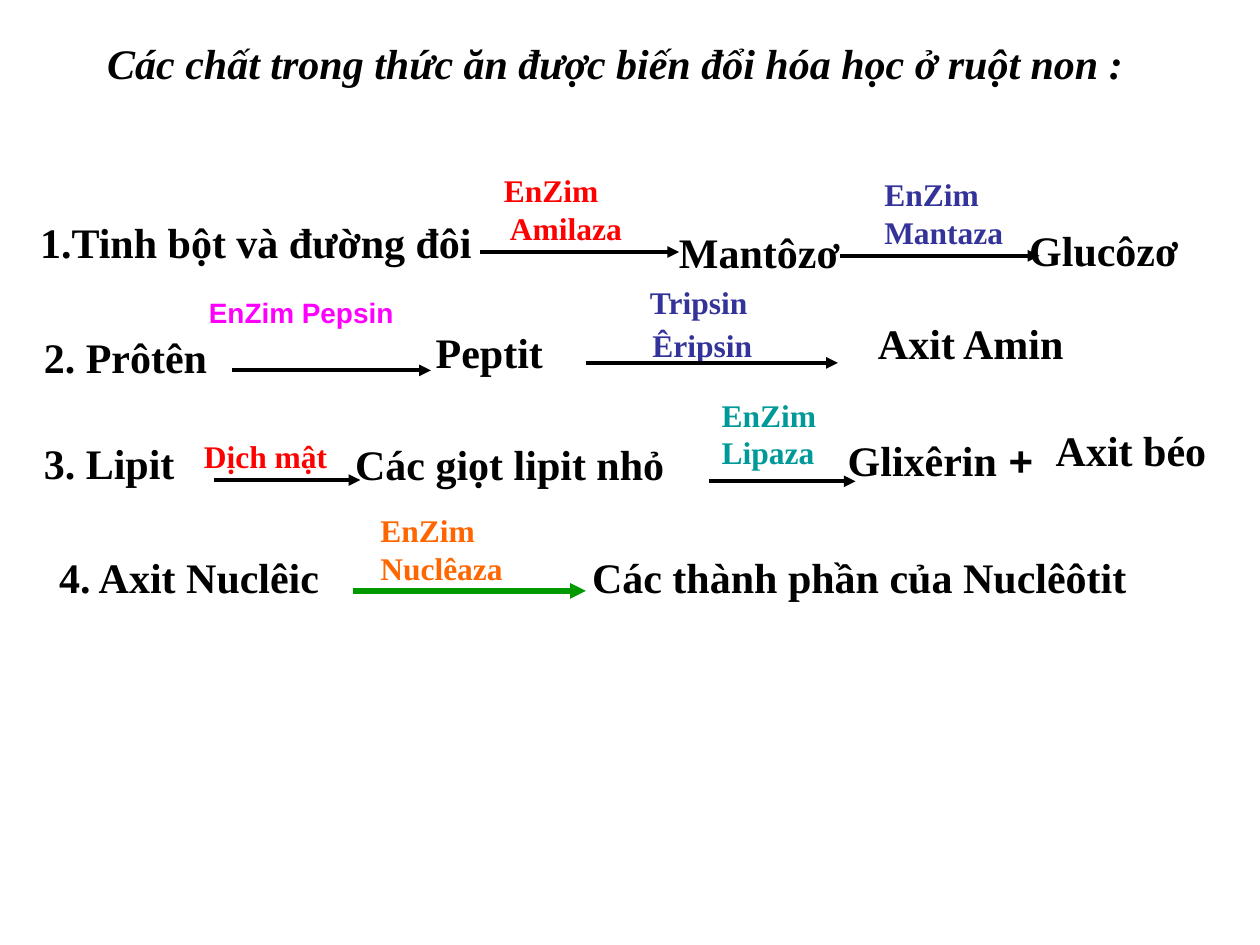
"""Build a slide on how the small intestine chemically breaks down food."""
from lxml.etree import SubElement
from pptx import Presentation
from pptx.dml.color import RGBColor
from pptx.enum.shapes import MSO_CONNECTOR as CONNECTOR
from pptx.enum.text import MSO_AUTO_SIZE as AUTO_SIZE
from pptx.oxml.ns import qn
from pptx.util import Inches, Pt

COLORS = {
    "black": "000000",
    "red": "FF0000",
    "indigo": "333399",
    "magenta": "FF00FF",
    "teal": "009999",
    "orange": "FF6600",
    "green": "009900",
}
SERIF = "Times New Roman"
SANS = "Arial"

SUBSTANCES = [
    ("1.Tinh bột và đường đôi", 0.22, 1.67, 3.7, True),
    ("Mantôzơ", 5.29, 1.75, 1.75, True),
    ("Glucôzơ", 8.07, 1.73, 1.75, True),
    ("2. Prôtên", 0.25, 2.58, 1.5, True),
    ("Peptit", 3.36, 2.54, 1.06, False),
    ("Axit Amin", 6.87, 2.47, 1.76, False),
    ("3. Lipit", 0.25, 3.42, 1.31, True),
    ("Các giọt lipit nhỏ", 2.72, 3.43, 2.68, False),
    ("Axit béo", 8.28, 3.32, 1.41, False),
    ("4. Axit Nuclêic", 0.37, 4.33, 2.29, False),
    ("Các thành phần của Nuclêôtit", 4.6, 4.33, 4.49, False),
]
ENZYMES = [
    ("EnZim\n Amilaza", 3.9, 1.31, 1.15, "red"),
    ("EnZim\nMantaza", 6.92, 1.34, 1.16, "indigo"),
    ("Tripsin", 5.06, 2.2, 0.98, "indigo"),
    ("Êripsin", 5.08, 2.54, 1.17, "indigo"),
    ("Dịch mật", 1.52, 3.42, 1.19, "red"),
    ("EnZim\nLipaza", 5.63, 3.09, 0.96, "teal"),
    ("EnZim\nNuclêaza", 2.92, 4.01, 1.18, "orange"),
]
ARROWS = [
    (3.81, 2, 1.58),
    (6.67, 2.03, 1.58),
    (1.84, 2.94, 1.58),
    (4.65, 2.88, 2),
    (1.7, 3.81, 1.16),
    (5.63, 3.82, 1.16),
]


def format_run(r, size, color, font=SERIF, italic=False):
    """Apply bold lettering to a run."""
    r.font.name = font
    r.font.size = Pt(size)
    r.font.bold = True
    r.font.italic = italic
    r.font.color.rgb = RGBColor.from_string(COLORS[color])


def add_label(slide, text, left, top, width, size=24, color="black",
              wrap=False, font=SERIF, italic=False):
    """Add a text box with one paragraph per line and return its frame."""
    height = 0.1 + len(text.split("\n")) * size / 60
    sp = slide.shapes.add_textbox(Inches(left), Inches(top), Inches(width), Inches(height))
    tf = sp.text_frame
    tf.text = text
    tf.word_wrap = wrap
    tf.auto_size = AUTO_SIZE.SHAPE_TO_FIT_TEXT
    for p in tf.paragraphs:
        for r in p.runs:
            format_run(r, size, color, font, italic)
    return tf


def add_arrow(slide, left, y, length, color="black", weight=2.25):
    """Add a horizontal arrow pointing right."""
    line = slide.shapes.add_connector(
        CONNECTOR.STRAIGHT, Inches(left), Inches(y), Inches(left + length), Inches(y))
    line.line.color.rgb = RGBColor.from_string(COLORS[color])
    line.line.width = Pt(weight)
    SubElement(line.line._get_or_add_ln(), qn("a:tailEnd"), type="triangle")
    SubElement(line._element.spPr, qn("a:effectLst"))


def main():
    """Create the slide and save it."""
    prs = Presentation()
    prs.slide_width, prs.slide_height = Inches(10), Inches(7.5)
    slide = prs.slides.add_slide(prs.slide_layouts[6])

    add_label(slide, " Các chất trong thức ăn được biến đổi hóa học ở ruột non :",
              0.67, 0.25, 8.46, wrap=True, italic=True)
    for text, left, top, width, wrap in SUBSTANCES:
        add_label(slide, text, left, top, width, wrap=wrap)
    tf = add_label(slide, "Glixêrin", 6.63, 3.4, 1.74)
    r = tf.paragraphs[0].add_run()
    r.text = " +"
    format_run(r, 24, "black", SANS)

    for text, left, top, width, color in ENZYMES:
        add_label(slide, text, left, top, width, 18, color)
    add_label(slide, "EnZim Pepsin", 1.56, 2.3, 1.94, 16, "magenta", wrap=True, font=SANS)

    for left, y, length in ARROWS:
        add_arrow(slide, left, y, length)
    add_arrow(slide, 2.8, 4.69, 1.85, "green", 3)
    prs.save("out.pptx")


if __name__ == "__main__":
    main()
